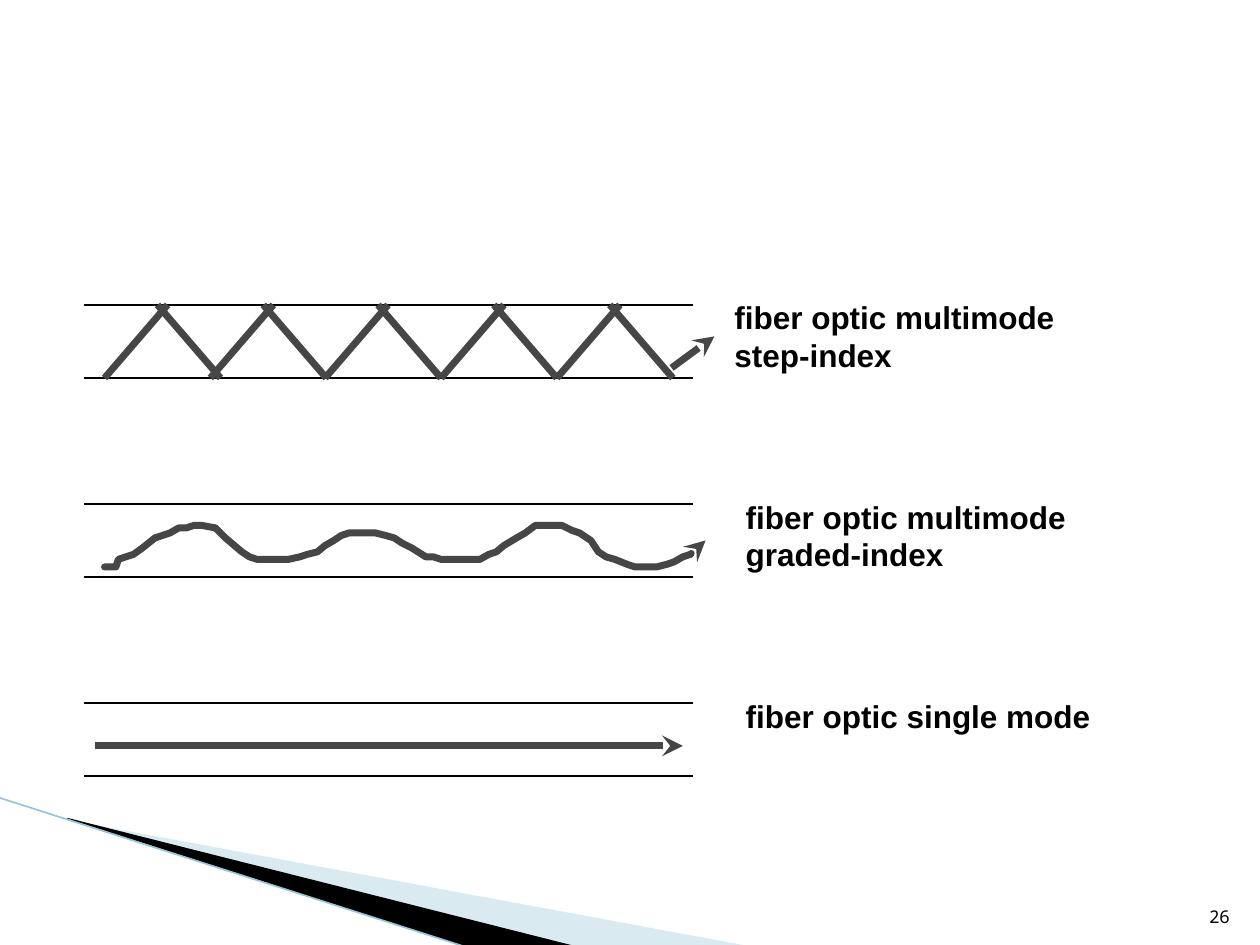
import lxml.etree
import pptx
import pptx.dml.color
import pptx.enum.shapes
import pptx.enum.text
import pptx.oxml.ns
import pptx.util
from pptx.util import Inches

INK, RAY = "000000", "464646"
rgb = pptx.dml.color.RGBColor.from_string
qn = pptx.oxml.ns.qn

deck = pptx.Presentation()
deck.slide_width, deck.slide_height = Inches(10), Inches(7.5)
page = deck.slides.add_slide(deck.slide_layouts[6])


def draw_line(start, end, color, width, arrow=False):
    line = page.shapes.add_connector(
        pptx.enum.shapes.MSO_CONNECTOR.STRAIGHT,
        *[Inches(value) for value in (*start, *end)])
    line.line.color.rgb = rgb(color)
    line.line.width = pptx.util.Pt(width)
    properties = line._element.spPr
    lxml.etree.SubElement(properties, qn("a:effectLst"))
    if arrow:
        lxml.etree.SubElement(properties.find(qn("a:ln")), qn("a:tailEnd"), type="stealth")


def draw_outline(points, close):
    corners = [(Inches(x), Inches(y)) for x, y in points]
    builder = page.shapes.build_freeform(*corners[0])
    builder.add_line_segments(corners[1:], close=close)
    shape = builder.convert_to_shape()
    shape.shadow.inherit = False
    return shape


# Corner decoration: a pale wedge, a black wedge and a thin edge
wedges = [
    ([(0.55, 6.51), (5.95, 7.51), (4.56, 7.51), (0.55, 6.5)], "A0CBDC", 40),
    ([(0.53, 6.49), (4.57, 7.51), (3.72, 7.52), (0.54, 6.5)], INK, 100),
]
for points, color, opacity in wedges:
    wedge = draw_outline(points, close=True)
    wedge.fill.solid()
    wedge.fill.fore_color.rgb = rgb(color)
    wedge.line.fill.background()
    if opacity < 100:
        fill_color = wedge._element.spPr.find(qn("a:solidFill"))[0]
        lxml.etree.SubElement(fill_color, qn("a:alpha"), val=str(opacity * 1000))
draw_line((-0.01, 6.33), (3.71, 7.52), "97C5D8", 0.95)

# Walls of the three fibers
for top in (2.42, 4, 5.58):
    for y in (top, top + 0.58):
        draw_line((0.67, y), (5.5, y), INK, 1)

# Step-index: rays bouncing between the walls
for x in (0.83, 1.67, 2.58, 3.5, 4.42):
    draw_line((x, 3), (x + 0.5, 2.42), RAY, 4)
    draw_line((x + 0.92, 3), (x + 0.42, 2.42), RAY, 4)
draw_line((5.33, 2.92), (5.67, 2.67), RAY, 4, arrow=True)

# Graded-index: a wavy ray
wave_points = [
    (0.83, 4.5), (0.92, 4.5), (0.94, 4.44), (1, 4.42), (1.06, 4.4), (1.13, 4.35),
    (1.23, 4.27), (1.29, 4.25), (1.35, 4.23), (1.42, 4.19), (1.48, 4.19),
    (1.54, 4.17), (1.6, 4.17), (1.71, 4.19), (1.79, 4.27), (1.92, 4.38),
    (1.98, 4.42), (2.04, 4.44), (2.29, 4.44), (2.38, 4.42), (2.44, 4.4),
    (2.52, 4.38), (2.58, 4.33), (2.65, 4.29), (2.71, 4.25), (2.77, 4.23),
    (2.98, 4.23), (3.06, 4.25), (3.13, 4.27), (3.19, 4.31), (3.27, 4.35),
    (3.38, 4.42), (3.44, 4.42), (3.5, 4.44), (3.81, 4.44), (3.88, 4.4),
    (3.94, 4.38), (4, 4.33), (4.1, 4.27), (4.17, 4.23), (4.25, 4.17),
    (4.46, 4.17), (4.54, 4.21), (4.6, 4.23), (4.69, 4.29), (4.75, 4.38),
    (4.81, 4.42), (4.88, 4.44), (4.98, 4.48), (5.04, 4.5), (5.21, 4.5),
    (5.29, 4.48), (5.35, 4.46), (5.42, 4.42), (5.48, 4.4), (5.54, 4.33), (5.6, 4.29),
]
wave = draw_outline(wave_points, close=False)
wave.fill.background()
wave.line.color.rgb = rgb(RAY)
wave.line.width = pptx.util.Pt(4)
wave_line = wave._element.spPr.find(qn("a:ln"))
wave_line.set("cap", "rnd")
lxml.etree.SubElement(wave_line, qn("a:round"))
lxml.etree.SubElement(wave_line, qn("a:tailEnd"), type="stealth")

# Single mode: one straight ray
draw_line((0.75, 5.92), (5.42, 5.92), RAY, 4, arrow=True)

# Fiber labels and page number
label_font = {"name": "Arial", "size": pptx.util.Pt(18), "bold": True}
number_font = {"name": "Noto Sans Mono", "size": pptx.util.Pt(10), "bold": False}
label_frame = {"word_wrap": False,
               "auto_size": pptx.enum.text.MSO_AUTO_SIZE.SHAPE_TO_FIT_TEXT}
number_frame = {"word_wrap": True,
                "vertical_anchor": pptx.enum.text.MSO_ANCHOR.BOTTOM}
left, right = pptx.enum.text.PP_ALIGN.LEFT, pptx.enum.text.PP_ALIGN.RIGHT
texts = [
    ((5.73, 2.32, 3.59, 0.9), ["fiber optic multimode", "step-index"],
     label_font, label_frame, left),
    ((5.82, 3.9, 3.59, 0.9), ["fiber optic multimode", "graded-index"],
     label_font, label_frame, left),
    ((5.82, 5.48, 3.85, 0.5), ["fiber optic single mode"],
     label_font, label_frame, left),
    ((9.46, 7.01, 0.4, 0.4), ["26"], number_font, number_frame, right),
]
for place, lines, font, frame_format, alignment in texts:
    box = page.shapes.add_textbox(*[Inches(value) for value in place])
    frame = box.text_frame
    for name, value in frame_format.items():
        setattr(frame, name, value)
    frame.text = "\n".join(lines)
    for para in frame.paragraphs:
        para.alignment = alignment
        span = para.runs[0]
        span.font.color.rgb = rgb(INK)
        for name, value in font.items():
            setattr(span.font, name, value)

deck.save("out.pptx")
